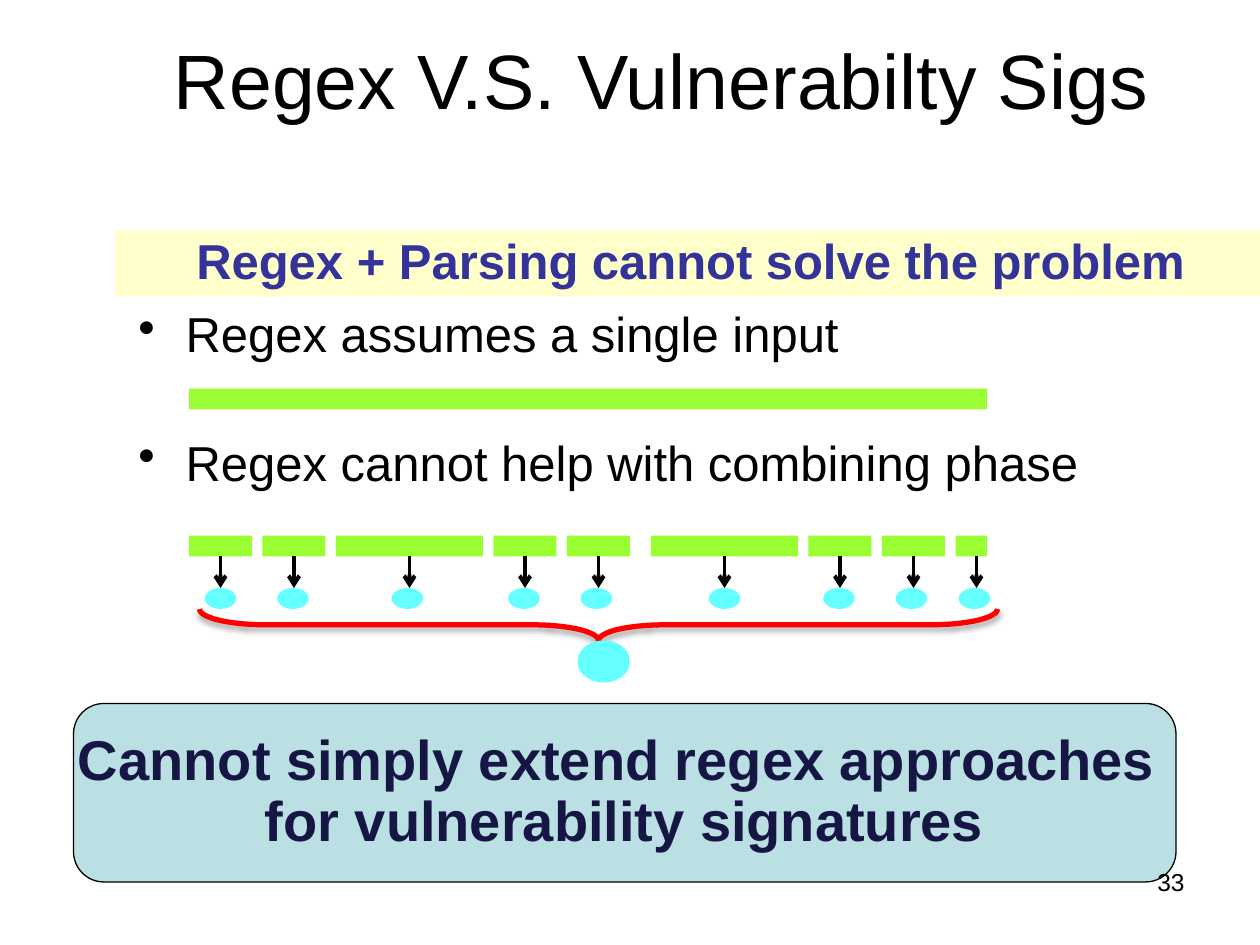
from dataclasses import dataclass

from lxml import etree
from pptx import Presentation
from pptx.dml.color import RGBColor
from pptx.enum.shapes import MSO_CONNECTOR, MSO_SHAPE
from pptx.enum.text import MSO_ANCHOR, PP_ALIGN
from pptx.oxml.ns import qn
from pptx.util import Pt

PX = 7620
RECT, OVAL = MSO_SHAPE.RECTANGLE, MSO_SHAPE.OVAL
ROUNDED, BRACE = MSO_SHAPE.ROUNDED_RECTANGLE, MSO_SHAPE.LEFT_BRACE
STRAIGHT = MSO_CONNECTOR.STRAIGHT
TOP, MIDDLE = MSO_ANCHOR.TOP, MSO_ANCHOR.MIDDLE
LEFT, CENTER, RIGHT = PP_ALIGN.LEFT, PP_ALIGN.CENTER, PP_ALIGN.RIGHT


@dataclass(frozen=True)
class Theme:
    font: str = "Arial"
    ink: str = "000000"
    banner: str = "FFFFCC"
    banner_ink: str = "333399"
    segment: str = "99FF33"
    match: str = "66FFFF"
    brace: str = "FF0000"
    callout: str = "BBE0E3"
    callout_ink: str = "161645"
    title_size: int = 44
    body_size: int = 28
    callout_size: int = 32
    number_size: int = 14


THEME = Theme()


def rgb(value):
    return RGBColor.from_string(value)


def emu(*lengths):
    return [length * PX for length in lengths]


def set_all(target, values):
    for name, value in values.items():
        setattr(target, name, value)


def add_text_box(slide, box):
    return slide.shapes.add_textbox(*emu(*box)).text_frame


def add_block(slide, kind, box, fill=None, line=None, width=0.75):
    block = slide.shapes.add_shape(kind, *emu(*box))
    block.shadow.inherit = False
    if fill:
        block.fill.solid()
        block.fill.fore_color.rgb = rgb(fill)
    else:
        block.fill.background()
    if line:
        block.line.color.rgb = rgb(line)
        block.line.width = Pt(width)
    else:
        block.line.fill.background()
    return block


def write(frame, lines, size, color=THEME.ink, bold=False, anchor=TOP,
          align=LEFT, spacing=1.0, gap=0, wrap=True, bullet=False):
    set_all(frame, {"word_wrap": wrap, "vertical_anchor": anchor})
    for index, line in enumerate(lines):
        paragraph = frame.add_paragraph() if index else frame.paragraphs[0]
        paragraph.text = line
        set_all(paragraph, {"alignment": align, "line_spacing": spacing})
        if index:
            paragraph.space_before = Pt(gap)
        if bullet:
            properties = paragraph._p.get_or_add_pPr()
            properties.set("marL", str(45 * PX))
            properties.set("indent", str(-45 * PX))
            etree.SubElement(properties, qn("a:buChar")).set("char", "•")
        for run in paragraph.runs:
            set_all(run.font, {"name": THEME.font, "size": Pt(size), "bold": bold})
            run.font.color.rgb = rgb(color)


def add_arrow(slide, x, top, bottom):
    arrow = slide.shapes.add_connector(STRAIGHT, *emu(x, top, x, bottom))
    arrow.line.color.rgb = rgb(THEME.ink)
    arrow.line.width = Pt(2.25)
    etree.SubElement(arrow.line._get_or_add_ln(), qn("a:tailEnd")).set("type", "arrow")
    etree.SubElement(arrow._element.spPr, qn("a:effectLst"))


def add_title(slide, box):
    write(add_text_box(slide, box), ["Regex V.S. Vulnerabilty Sigs"],
          THEME.title_size, anchor=MIDDLE, align=CENTER)


def add_points(slide, box):
    points = ["Regex assumes a single input", "Regex cannot help with combining phase"]
    write(add_text_box(slide, box), points, THEME.body_size,
          spacing=0.9, gap=43, bullet=True)


def add_banner(slide, box):
    frame = add_block(slide, RECT, box, THEME.banner).text_frame
    frame.margin_left = 77 * PX
    write(frame, ["Regex + Parsing cannot solve the problem"], THEME.body_size,
          THEME.banner_ink, bold=True, spacing=0.9)


def add_segments(slide, box):
    left, top, _, height = box
    bar = 20
    segments = [(0, 60), (70, 60), (140, 140), (290, 60), (360, 60),
                (440, 140), (590, 60), (660, 60), (730, 40)]
    match_shifts = [0, -1, -2, -1, -2, 0, -1, -2, -2]
    for (start, width), shift in zip(segments, match_shifts):
        x = left + start
        center = x + width // 2
        shown = min(width, box[2] - start)
        add_block(slide, RECT, (x, top, shown, bar), THEME.segment)
        add_arrow(slide, center, top + bar, top + height - bar)
        add_block(slide, OVAL, (center - 15 + shift, top + height - bar, 30, bar),
                  THEME.match)


def add_combination(slide, box):
    left, top, width, height = box
    depth = 30
    brace_box = (left + (width - depth) // 2, top + (depth - width) // 2, depth, width)
    brace = add_block(slide, BRACE, brace_box, line=THEME.brace, width=3)
    brace.rotation = 270
    brace.adjustments[0] = 2.11
    brace.adjustments[1] = 0.5
    effects = brace._element.spPr.find(qn("a:effectLst"))
    shadow = etree.SubElement(effects, qn("a:outerShdw"), blurRad=str(Pt(3.1)),
                              dist=str(Pt(1.8)), dir="5400000", rotWithShape="0")
    color = etree.SubElement(shadow, qn("a:srgbClr"), val=THEME.ink)
    etree.SubElement(color, qn("a:alpha"), val="35000")
    add_block(slide, OVAL, (left + width // 2 - 20, top + depth, 50, height - depth),
              THEME.match)


def add_callout(slide, box):
    callout = add_block(slide, ROUNDED, box, THEME.callout, THEME.ink)
    callout.adjustments[0] = 0.17
    write(callout.text_frame,
          ["Cannot simply extend regex approaches \vfor vulnerability signatures"],
          THEME.callout_size, THEME.callout_ink, bold=True, anchor=MIDDLE,
          align=CENTER, spacing=0.9, wrap=False)


def add_page_number(slide, box):
    write(add_text_box(slide, box), ["33"], THEME.number_size, align=RIGHT)


def main():
    deck = Presentation()
    set_all(deck, {"slide_width": 1200 * PX, "slide_height": 900 * PX})
    slide = deck.slides.add_slide(deck.slide_layouts[6])
    add_title(slide, (90, 0, 1080, 150))
    add_points(slide, (120, 290, 1080, 190))
    add_banner(slide, (110, 220, 1090, 62))
    add_segments(slide, (180, 510, 760, 70))
    add_combination(slide, (190, 580, 760, 70))
    add_block(slide, RECT, (180, 370, 760, 20), THEME.segment)
    add_callout(slide, (70, 670, 1050, 170))
    add_page_number(slide, (860, 820, 280, 62))
    deck.save("out.pptx")


if __name__ == "__main__":
    main()
